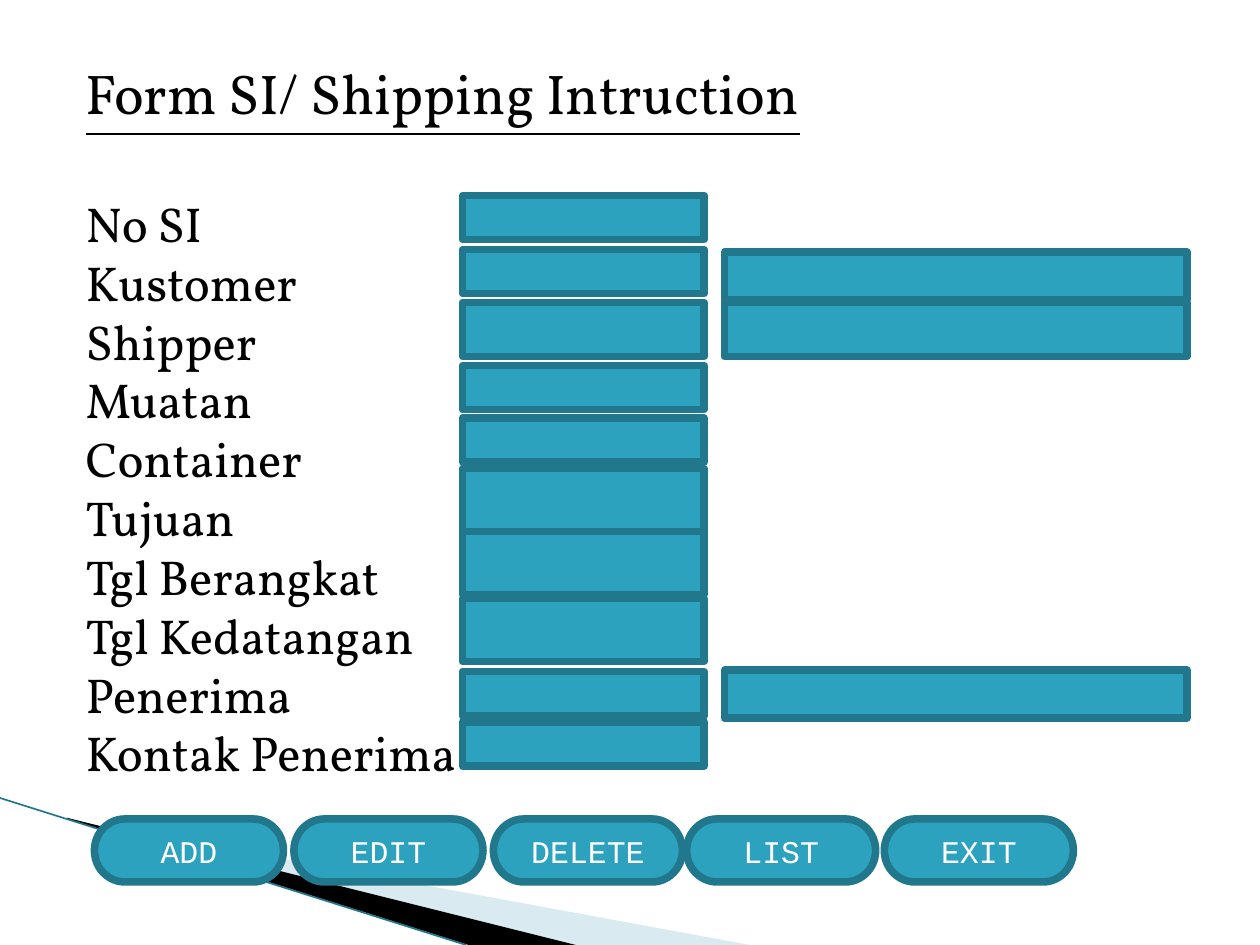
from lxml.etree import SubElement
from pptx import Presentation
from pptx.dml.color import RGBColor
from pptx.enum.shapes import MSO_CONNECTOR, MSO_SHAPE
from pptx.enum.text import MSO_ANCHOR, MSO_AUTO_SIZE, PP_ALIGN
from pptx.oxml.ns import qn
from pptx.util import Pt

COLORS = {"teal": "2DA2BF", "edge": "21788D", "pale": "A0CBDC",
          "black": "000000", "white": "FFFFFF"}

# Content
TITLE = "Form SI/ Shipping Intruction"
# label, field top, field height, (top, height) of the wide field if any
FIELDS = [
    ("No SI", 111.6, 25.2, None),
    ("Kustomer", 142.6, 25.2, (144, 27.4)),
    ("Shipper", 172.8, 31, (172.8, 31)),
    ("Muatan", 208.8, 25.2, None),
    ("Container", 239, 25.2, None),
    ("Tujuan", 267.8, 36, None),
    ("Tgl Berangkat", 303.8, 36, None),
    ("Tgl Kedatangan", 342, 36, None),
    ("Penerima", 383.8, 25.2, (383, 27.4)),
    ("Kontak Penerima", 412.6, 25.2, None),
]
BUTTONS = [("ADD", 54), ("EDIT", 168), ("DELETE", 282), ("LIST", 392.4), ("EXIT", 505.4)]
WEDGES = [
    ("pale", 40, [(39.6, 468.5), (428.4, 540), (328.3, 540), (39.6, 468)]),
    ("black", 100, [(38.2, 467.3), (329, 540), (267.8, 540), (38.9, 468)]),
]
FIELD_LEFT, FIELD_WIDTH = 264.2, 138.2
WIDE_LEFT, WIDE_WIDTH = 414, 264.2


def color(name):
    return RGBColor.from_string(COLORS[name])


def add_text(para, text, *, size, font, fill, underline=False, align=PP_ALIGN.LEFT, before=0):
    para.alignment = align
    para.space_before = Pt(before)
    span = para.add_run()
    span.text = text
    span.font.size = Pt(size)
    span.font.name = font
    span.font.underline = underline
    span.font.color.rgb = color(fill)


def add_block(page, kind, left, top, width, height):
    block = page.shapes.add_shape(kind, Pt(left), Pt(top), Pt(width), Pt(height))
    block.shadow.inherit = False
    block.fill.solid()
    block.fill.fore_color.rgb = color("teal")
    block.line.color.rgb = color("edge")
    block.line.width = Pt(4.33)
    return block


def add_wedge(page, fill, opacity, points):
    corners = [(Pt(x), Pt(y)) for x, y in points]
    builder = page.shapes.build_freeform(*corners[0])
    builder.add_line_segments(corners[1:], close=True)
    wedge = builder.convert_to_shape()
    wedge.shadow.inherit = False
    wedge.fill.solid()
    wedge.fill.fore_color.rgb = color(fill)
    wedge.line.fill.background()
    if opacity < 100:
        tint = wedge.fill._xPr.find(qn("a:solidFill"))[0]
        SubElement(tint, qn("a:alpha")).set("val", str(opacity * 1000))


def main():
    deck = Presentation()
    deck.slide_width, deck.slide_height = Pt(720), Pt(540)
    page = deck.slides.add_slide(deck.slide_layouts[6])

    # Corner decoration
    for wedge in WEDGES:
        add_wedge(page, *wedge)
    edge = page.shapes.add_connector(MSO_CONNECTOR.STRAIGHT, Pt(0), Pt(456), Pt(266.4), Pt(540))
    edge.line.color.rgb = color("edge")
    edge.line.width = Pt(0.95)
    SubElement(edge._element.spPr, qn("a:effectLst"))

    # Title and labels
    box = page.shapes.add_textbox(Pt(41.8), Pt(30.2), Pt(653.8), Pt(424))
    frame = box.text_frame
    frame.word_wrap = True
    frame.auto_size = MSO_AUTO_SIZE.SHAPE_TO_FIT_TEXT
    add_text(frame.paragraphs[0], TITLE, size=32, font="Vollkorn", fill="black", underline=True)
    for index, (label, *_) in enumerate(FIELDS):
        add_text(frame.add_paragraph(), label, size=28, font="Vollkorn", fill="black",
                 before=0 if index else 38.4)

    # Input fields
    for _, top, height, wide in FIELDS:
        add_block(page, MSO_SHAPE.RECTANGLE, FIELD_LEFT, top, FIELD_WIDTH, height)
        if wide:
            add_block(page, MSO_SHAPE.RECTANGLE, WIDE_LEFT, wide[0], WIDE_WIDTH, wide[1])

    # Buttons
    for caption, left in BUTTONS:
        button = add_block(page, MSO_SHAPE.FLOWCHART_TERMINATOR, left, 468, 108, 36)
        button.text_frame.vertical_anchor = MSO_ANCHOR.MIDDLE
        add_text(button.text_frame.paragraphs[0], caption, size=18, font="Courier New",
                 fill="white", align=PP_ALIGN.CENTER)

    deck.save("out.pptx")


if __name__ == "__main__":
    main()
